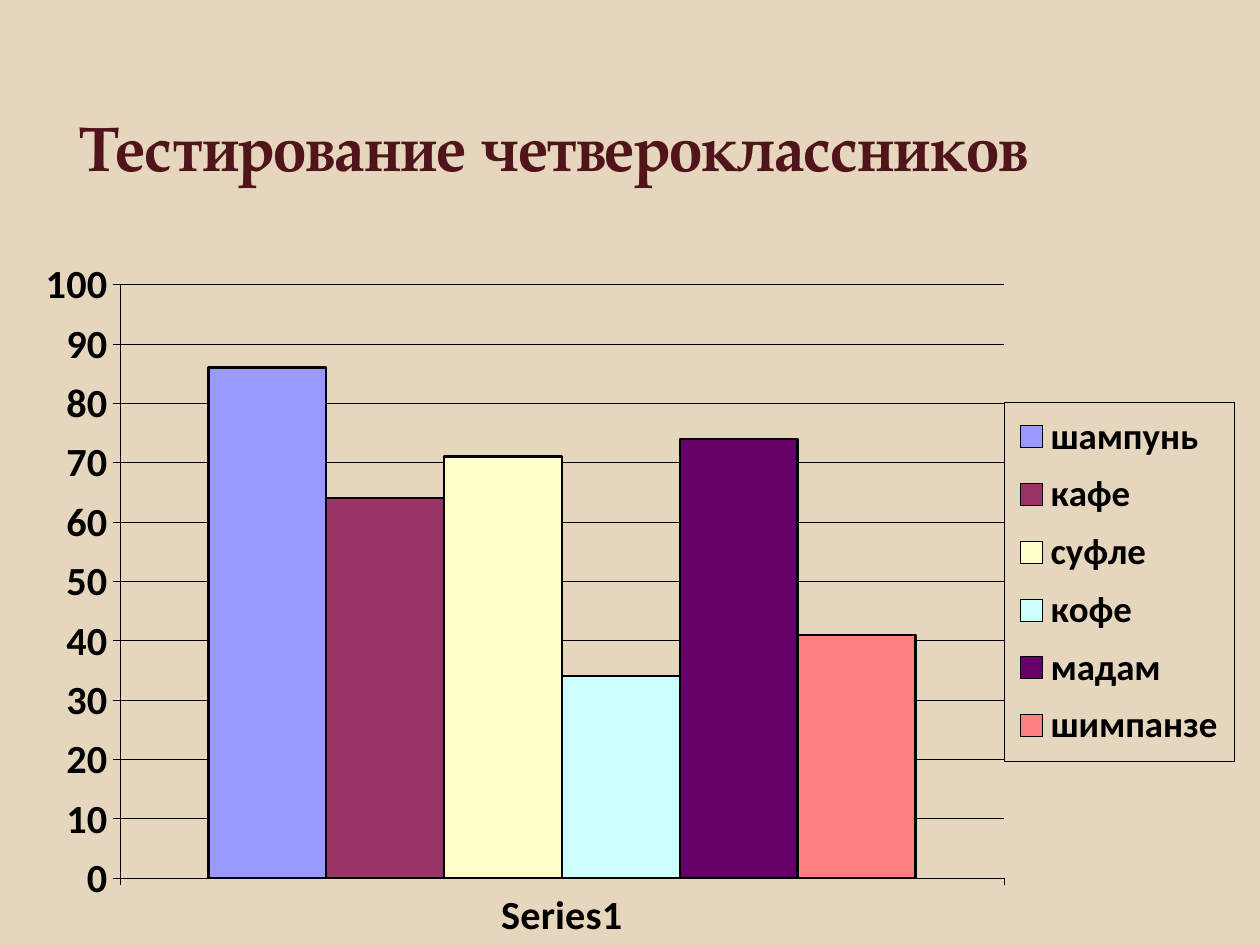
from dataclasses import dataclass

from lxml import etree
from pptx import Presentation
from pptx.chart.data import CategoryChartData
from pptx.dml.color import RGBColor
from pptx.enum.chart import XL_CHART_TYPE, XL_LEGEND_POSITION, XL_TICK_LABEL_POSITION, XL_TICK_MARK
from pptx.enum.text import MSO_ANCHOR, PP_ALIGN
from pptx.oxml import parse_xml
from pptx.oxml.ns import nsdecls, qn
from pptx.util import Inches, Pt

COLUMNS = XL_CHART_TYPE.COLUMN_CLUSTERED
RIGHT = XL_LEGEND_POSITION.RIGHT
LOW = XL_TICK_LABEL_POSITION.LOW
OUTSIDE, NO_TICK = XL_TICK_MARK.OUTSIDE, XL_TICK_MARK.NONE
BOTTOM, LEFT = MSO_ANCHOR.BOTTOM, PP_ALIGN.LEFT


@dataclass(frozen=True)
class Theme:
    background: str = "E6D6BD"
    title: str = "50141B"
    ink: str = "000000"
    title_font: str = "TeX Gyre Pagella"
    chart_font: str = "Calibri"
    title_size: float = 36
    axis_size: float = 23
    legend_size: float = 21.1
    hairline: float = 0.34
    outline: float = 1.35


THEME = Theme()

WORDS = [
    ("шампунь", 86, "9999FF"),
    ("кафе", 64, "993366"),
    ("суфле", 71, "FFFFCC"),
    ("кофе", 34, "CCFFFF"),
    ("мадам", 74, "660066"),
    ("шимпанзе", 41, "FF8080"),
]


def style_font(font, name, size, color):
    font.name = name
    font.size = Pt(size)
    font.bold = True
    font.color.rgb = RGBColor.from_string(color)


def style_line(line, width):
    line.color.rgb = RGBColor.from_string(THEME.ink)
    line.width = Pt(width)


def set_layout(element, index, x, y, w, h, inner=False):
    """Place a chart part by fractions of the chart's size."""
    for old in element.findall(qn("c:layout")):
        element.remove(old)
    layout = parse_xml(f"<c:layout {nsdecls('c')}><c:manualLayout/></c:layout>")
    settings = [("layoutTarget", "inner")] if inner else []
    settings += [("xMode", "edge"), ("yMode", "edge"), ("x", x), ("y", y), ("w", w), ("h", h)]
    for tag, value in settings:
        etree.SubElement(layout[0], qn(f"c:{tag}")).set("val", str(value))
    element.insert(index, layout)


def add_title(slide, text):
    title = slide.shapes.title
    title.left, title.top = Inches(0.53), Inches(0.36)
    title.width, title.height = Inches(8.95), Inches(1.15)
    tf = title.text_frame
    tf.text = text
    tf.vertical_anchor = BOTTOM
    p = tf.paragraphs[0]
    p.alignment = LEFT
    style_font(p.font, THEME.title_font, THEME.title_size, THEME.title)


def style_axes(chart):
    for axis in (chart.category_axis, chart.value_axis):
        axis.major_tick_mark, axis.minor_tick_mark = OUTSIDE, NO_TICK
        style_font(axis.tick_labels.font, THEME.chart_font, THEME.axis_size, THEME.ink)
        style_line(axis.format.line, THEME.hairline)
    chart.category_axis.tick_label_position = LOW
    values = chart.value_axis
    values.minimum_scale, values.maximum_scale, values.major_unit = 0, 100, 10
    values.has_major_gridlines = True
    style_line(values.major_gridlines.format.line, THEME.hairline)


def add_legend(chart):
    chart.has_legend = True
    legend = chart.legend
    legend.position = RIGHT
    legend.include_in_layout = False
    style_font(legend.font, THEME.chart_font, THEME.legend_size, THEME.ink)
    element = chart.element.find(".//" + qn("c:legend"))
    set_layout(element, 1, 0.8, 0.23, 0.19, 0.52)
    border = parse_xml(
        f"<c:spPr {nsdecls('c', 'a')}><a:noFill/><a:ln w='{Pt(THEME.hairline)}'>"
        f"<a:solidFill><a:srgbClr val='{THEME.ink}'/></a:solidFill></a:ln></c:spPr>"
    )
    element.find(qn("c:txPr")).addprevious(border)


def add_word_chart(slide):
    data = CategoryChartData()
    data.categories = ["Series1"]
    for word, value, _ in WORDS:
        data.add_series(word, [value])
    frame = slide.shapes.add_chart(
        COLUMNS, Inches(0.28), Inches(1.93), Inches(9.61), Inches(5.53), data
    )
    chart = frame.chart
    chart.has_title = False
    style_font(chart.font, THEME.chart_font, THEME.axis_size, THEME.ink)
    plot = chart.plots[0]
    plot.gap_width, plot.overlap, plot.vary_by_categories = 150, 0, False
    for series, (_, _, color) in zip(plot.series, WORDS):
        series.format.fill.solid()
        series.format.fill.fore_color.rgb = RGBColor.from_string(color)
        style_line(series.format.line, THEME.outline)
    style_axes(chart)
    add_legend(chart)
    plot_area = chart.element.find(".//" + qn("c:plotArea"))
    set_layout(plot_area, 0, 0.07, 0.06, 0.73, 0.86, inner=True)


def main():
    prs = Presentation()
    prs.slide_width, prs.slide_height = Inches(10), Inches(7.5)
    slide = prs.slides.add_slide(prs.slide_layouts.get_by_name("Title Only"))
    fill = slide.background.fill
    fill.solid()
    fill.fore_color.rgb = RGBColor.from_string(THEME.background)
    add_title(slide, "Тестирование четвероклассников")
    add_word_chart(slide)
    prs.save("out.pptx")


if __name__ == "__main__":
    main()
